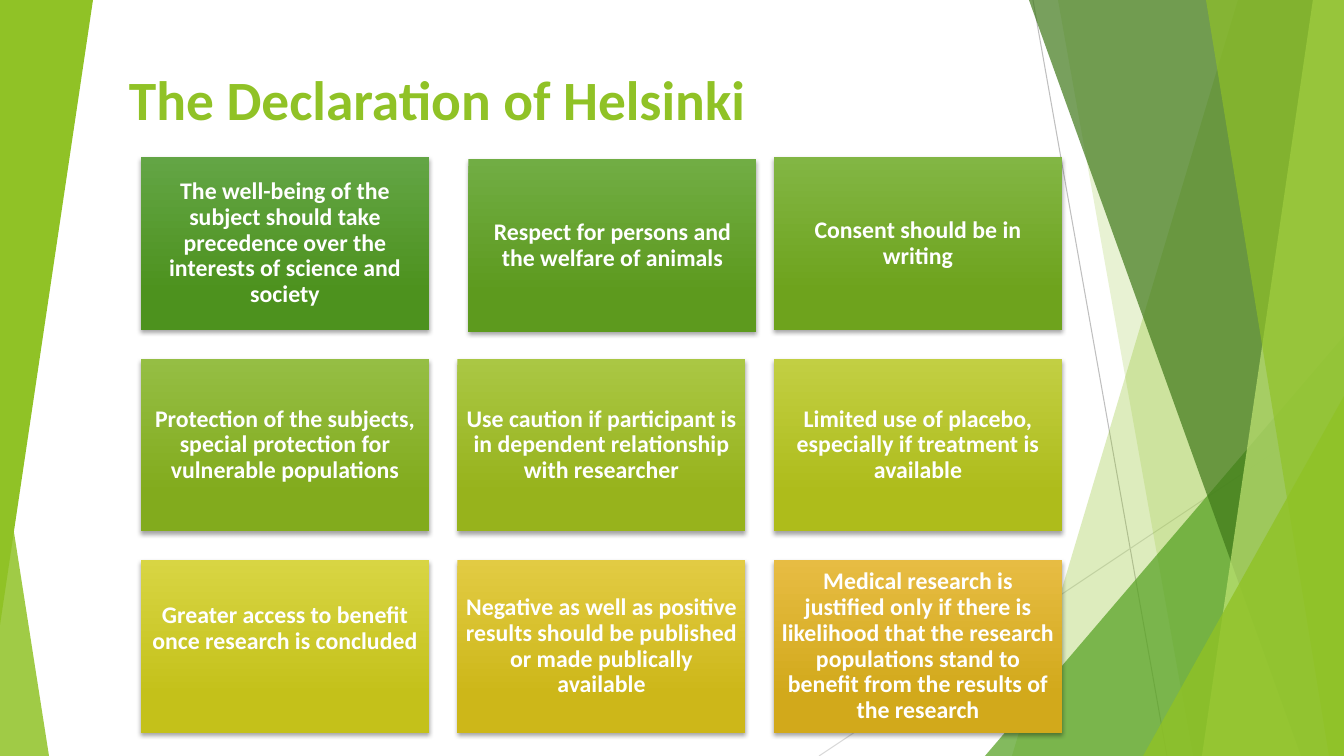
from dataclasses import dataclass

from lxml.etree import SubElement
from pptx import Presentation
from pptx.dml.color import RGBColor
from pptx.enum.shapes import MSO_CONNECTOR, MSO_SHAPE
from pptx.enum.text import MSO_ANCHOR, PP_ALIGN
from pptx.oxml.ns import qn
from pptx.util import Pt

SCALE = 914400 / 100.8
LEAF_GREEN = "90C226"
RAYS = [
    ((214, 0), (348, 756), "BFBFBF"),
    ((525, 406), (0, 756), "D9D9D9"),
]
FACETS = [
    ("band", 419, 193, LEAF_GREEN, 30),
    ("band", 239, 374, LEAF_GREEN, 20),
    ("triangle", 359, 420, "54A021", 72),
    ("band", 210, 482, "3F7819", 70),
    ("band", 494, 383, "C0E474", 70),
    ("band", 387, 510, LEAF_GREEN, 65),
    ("triangle", 201, 360, LEAF_GREEN, 80),
]
PRINCIPLES = [
    ("The well-being of the subject should take precedence over the interests of science and society",
     "63A545", "4D921E"),
    ("Respect for persons and the welfare of animals", "71AD44", "5D9A1E"),
    ("Consent should be in writing", "82B644", "6EA31D"),
    ("Protection of the subjects, special protection for vulnerable populations", "95BE44", "82AB1D"),
    ("Use caution if participant is in dependent relationship with researcher", "AAC744", "97B31C"),
    ("Limited use of placebo, especially if treatment is available", "C2CF43", "AEBC1B"),
    ("Greater access to benefit once research is concluded", "D8D543", "C4C11A"),
    ("Negative as well as positive results should be published or made publically available",
     "E2CB43", "CDB719"),
    ("Medical research is justified only if there is likelihood that the research populations "
     "stand to benefit from the results of the research", "E7BC43", "D2A91B"),
]
NUDGES = {1: (11, 2)}
BOTTOM_INSETS = {6: 43}


@dataclass
class Box:
    """A rectangle in px."""
    left: int
    top: int
    width: int
    height: int

    def emu(self):
        """Return the four lengths in EMU."""
        return [px(length) for length in (self.left, self.top, self.width, self.height)]


def px(length):
    """Turn px into EMU."""
    return round(length * SCALE)


def color(value):
    """Turn a hex string into a colour."""
    return RGBColor.from_string(value)


def apply_format(target, values):
    """Set each named attribute on the target."""
    for name, value in values.items():
        setattr(target, name, value)


def paint(shape, fill, opacity=100):
    """Give a shape a plain fill without line or shadow."""
    shape.shadow.inherit = False
    shape.line.fill.background()
    shape.fill.solid()
    shape.fill.fore_color.rgb = color(fill)
    if opacity < 100:
        srgb = shape._element.spPr.find(qn("a:solidFill")).find(qn("a:srgbClr"))
        SubElement(srgb, qn("a:alpha"), val=str(opacity * 1000))


def add_triangle(slide, box, apex, fill, opacity=100, rotation=0):
    """Add a right triangle with its apex at one side of the box."""
    triangle = slide.shapes.add_shape(MSO_SHAPE.ISOSCELES_TRIANGLE, *box.emu())
    triangle.adjustments[0] = apex
    triangle.rotation = rotation
    paint(triangle, fill, opacity)


def add_band(slide, box, top_x, bottom_x, fill, opacity):
    """Add a slanted band reaching the right edge of the box."""
    right, bottom = box.left + box.width, box.top + box.height
    builder = slide.shapes.build_freeform(box.left + top_x, box.top, SCALE)
    builder.add_line_segments([(right, box.top), (right, bottom), (box.left + bottom_x, bottom)])
    paint(builder.convert_to_shape(), fill, opacity)


def add_ray(slide, box, start, end, line_color):
    """Add a thin line between two points of the box."""
    points = [px(value) for x, y in (start, end) for value in (box.left + x, box.top + y)]
    ray = slide.shapes.add_connector(MSO_CONNECTOR.STRAIGHT, *points)
    ray.line.color.rgb = color(line_color)
    ray.line.width = Pt(0.75)
    SubElement(ray._element.spPr, qn("a:effectLst"))


def add_right_facets(slide, box):
    """Draw the rays and translucent facets at the right."""
    for start, end, line_color in RAYS:
        add_ray(slide, box, start, end, line_color)
    for kind, first, second, fill, opacity in FACETS:
        if kind == "band":
            add_band(slide, box, first, second, fill, opacity)
        else:
            corner = Box(box.left + box.width - first, box.top + box.height - second, first, second)
            add_triangle(slide, corner, 1, fill, opacity)


def add_left_facets(slide, box):
    """Draw the two triangles at the left edge."""
    lower = Box(box.left, box.top + box.height - 313, 49, 313)
    add_triangle(slide, lower, 0, LEAF_GREEN, 85)
    add_triangle(slide, Box(box.left, box.top, box.width, 625), 1, LEAF_GREEN, rotation=180)


def write_text(frame, text, size, font_color, frame_format, alignment):
    """Write one bold paragraph into a text frame."""
    apply_format(frame, {"word_wrap": True, **frame_format})
    paragraph = frame.paragraphs[0]
    apply_format(paragraph, {"alignment": alignment, "line_spacing": 0.9})
    run = paragraph.add_run()
    run.text = text
    apply_format(run.font, {"name": "Calibri", "size": Pt(size), "bold": True})
    run.font.color.rgb = color(font_color)


def add_title(slide, box):
    """Add the slide title."""
    title = slide.shapes.add_textbox(*box.emu())
    write_text(title.text_frame, "The Declaration of Helsinki", 39.6, LEAF_GREEN,
               {"vertical_anchor": MSO_ANCHOR.TOP}, PP_ALIGN.LEFT)


def add_card(slide, box, text, top_color, bottom_color, bottom_inset):
    """Add one shaded principle card."""
    card = slide.shapes.add_shape(MSO_SHAPE.RECTANGLE, *box.emu())
    card.line.fill.background()
    card.fill.gradient()
    card.fill.gradient_angle = 270
    for stop, position, value in zip(card.fill.gradient_stops, (0, 0.78), (top_color, bottom_color)):
        stop.position = position
        stop.color.rgb = color(value)
    card.shadow.inherit = False
    effects = card._element.spPr.find(qn("a:effectLst"))
    shadow = SubElement(effects, qn("a:outerShdw"), blurRad=str(Pt(3)), dist=str(Pt(2)),
                        dir="5400000", rotWithShape="0")
    shade = SubElement(shadow, qn("a:srgbClr"), val="000000")
    SubElement(shade, qn("a:alpha"), val="35000")
    insets = {f"margin_{side}": px(7) for side in ("left", "top", "right")}
    frame_format = {**insets, "margin_bottom": px(bottom_inset), "vertical_anchor": MSO_ANCHOR.MIDDLE}
    write_text(card.text_frame, text, 17, "FFFFFF", frame_format, PP_ALIGN.CENTER)


def add_principles(slide, box):
    """Lay out the cards in a three by three grid."""
    width, height = 288, 173
    column_step, row_step = (box.width - width) / 2, (box.height - height) / 2
    for index, (text, top_color, bottom_color) in enumerate(PRINCIPLES):
        row, column = divmod(index, 3)
        shift_x, shift_y = NUDGES.get(index, (0, 0))
        card_box = Box(box.left + column * column_step + shift_x,
                       box.top + row * row_step + shift_y, width, height)
        add_card(slide, card_box, text, top_color, bottom_color, BOTTOM_INSETS.get(index, 7))


def main():
    """Build and save the slide."""
    presentation = Presentation()
    apply_format(presentation, {"slide_width": px(1344), "slide_height": px(756)})
    slide = presentation.slides.add_slide(presentation.slide_layouts[6])
    add_right_facets(slide, Box(819, 0, 525, 756))
    add_left_facets(slide, Box(0, 0, 93, 756))
    add_title(slide, Box(119, 68, 987, 73))
    add_principles(slide, Box(141, 157, 921, 576))
    presentation.save("out.pptx")


if __name__ == "__main__":
    main()
